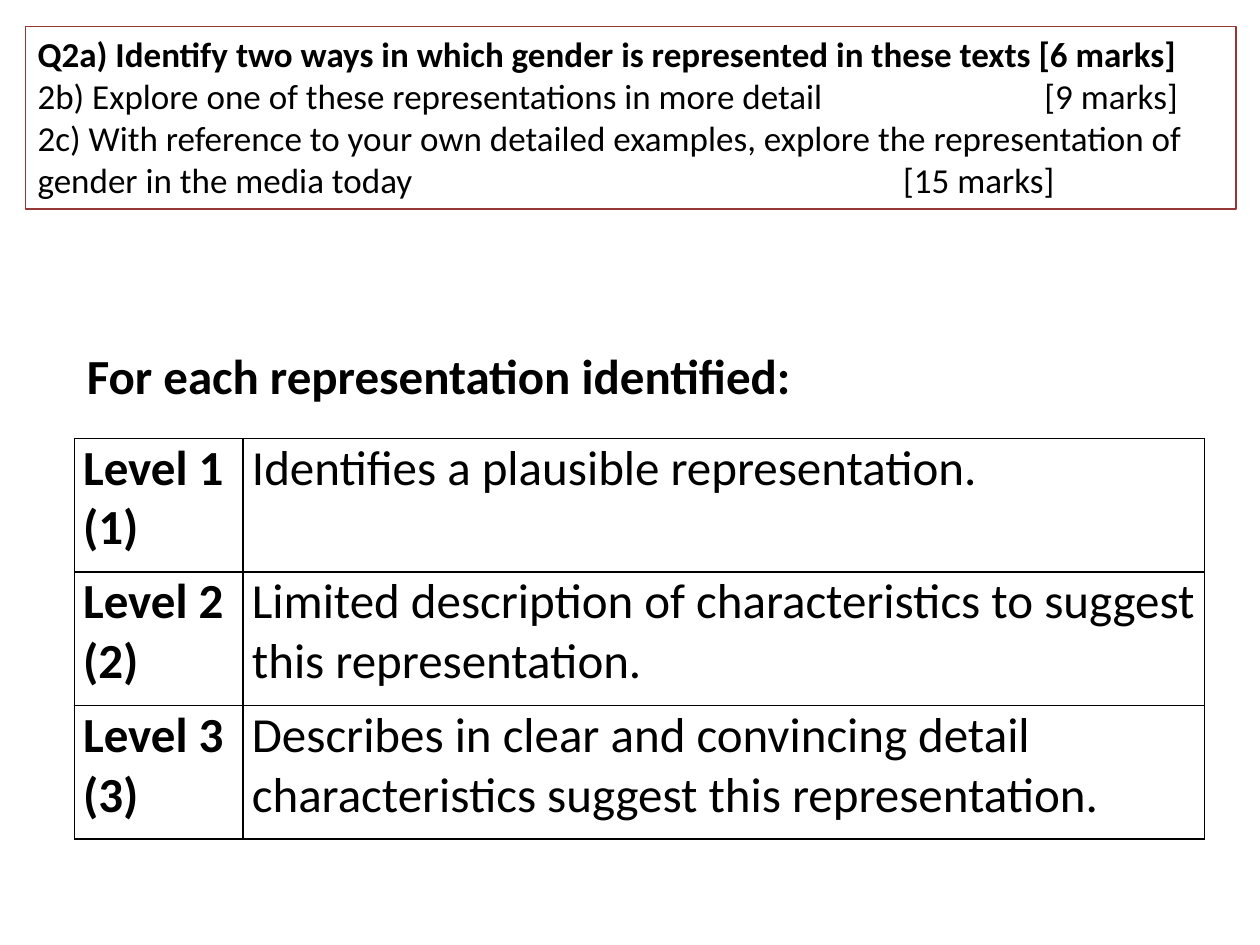
from lxml import etree
from pptx import Presentation
from pptx.dml.color import RGBColor
from pptx.enum.shapes import MSO_SHAPE
from pptx.enum.text import MSO_ANCHOR, PP_ALIGN
from pptx.oxml.ns import qn
from pptx.util import Inches, Pt

RECTANGLE = MSO_SHAPE.RECTANGLE
TOP, MIDDLE = MSO_ANCHOR.TOP, MSO_ANCHOR.MIDDLE
LEFT = PP_ALIGN.LEFT
FONT, BLACK, WHITE, RED = "Calibri", "000000", "FFFFFF", "953735"

QUESTIONS = [
    ("Q2a) Identify two ways in which gender is represented in these texts [6 marks]", True, None),
    ("2b) Explore one of these representations in more detail\t[9 marks]", False, 7.99),
    ("2c) With reference to your own detailed examples, explore the representation of "
     "gender in the media today\t[15 marks]", False, 6.87),
]
HEADING = "For each representation identified:"
LEVELS = [
    ("Level 1 (1)", "Identifies a plausible representation."),
    ("Level 2 (2)", "Limited description of characteristics to suggest this representation."),
    ("Level 3 (3)", "Describes in clear and convincing detail characteristics suggest this representation."),
]
COLUMN_WIDTHS = (1.34, 7.63)
ROW_HEIGHT = 1.06


def color(value):
    return RGBColor.from_string(value)


def write(para, text, size=28, bold=False, tab=None):
    para.alignment = LEFT
    span = para.add_run()
    span.text = text
    span.font.name = FONT
    span.font.size = Pt(size)
    span.font.bold = bold
    span.font.color.rgb = color(BLACK)
    if tab:
        stops = etree.SubElement(para._p.get_or_add_pPr(), qn("a:tabLst"))
        etree.SubElement(stops, qn("a:tab"), pos=str(Inches(tab)), algn="l")


def add_borders(cell):
    properties = cell._tc.get_or_add_tcPr()
    for index, side in enumerate(("lnL", "lnR", "lnT", "lnB")):
        line = etree.Element(qn("a:" + side), w=str(Pt(1)))
        fill = etree.SubElement(line, qn("a:solidFill"))
        etree.SubElement(fill, qn("a:srgbClr"), val=BLACK)
        properties.insert(index, line)


def add_questions(page):
    box = page.shapes.add_shape(RECTANGLE, Inches(0.2), Inches(0.21), Inches(9.61), Inches(1.45))
    box.shadow.inherit = False
    box.fill.background()
    box.line.color.rgb = color(RED)
    box.line.width = Pt(0.75)
    frame = box.text_frame
    frame.word_wrap = True
    frame.vertical_anchor = TOP
    for index, (text, bold, tab) in enumerate(QUESTIONS):
        para = frame.add_paragraph() if index else frame.paragraphs[0]
        write(para, text, size=20, bold=bold, tab=tab)


def add_levels(page):
    table = page.shapes.add_table(
        len(LEVELS), len(COLUMN_WIDTHS), Inches(0.59), Inches(3.48),
        Inches(sum(COLUMN_WIDTHS)), Inches(ROW_HEIGHT * len(LEVELS))).table
    table.first_row = table.horz_banding = False
    for column, width in zip(table.columns, COLUMN_WIDTHS):
        column.width = Inches(width)
    for row, texts in zip(table.rows, LEVELS):
        row.height = Inches(ROW_HEIGHT)
        for index, (cell, text) in enumerate(zip(row.cells, texts)):
            cell.margin_left = cell.margin_right = Inches(0.07)
            cell.margin_top = cell.margin_bottom = 0
            cell.fill.background()
            write(cell.text_frame.paragraphs[0], text, bold=index == 0)
            add_borders(cell)


def add_heading(page):
    box = page.shapes.add_textbox(Inches(0.59), Inches(2.69), Inches(7.48), Inches(0.57))
    frame = box.text_frame
    frame.word_wrap = True
    frame.vertical_anchor = MIDDLE
    write(frame.paragraphs[0], HEADING, bold=True)


def main():
    deck = Presentation()
    deck.slide_width, deck.slide_height = Inches(10), Inches(7.5)
    page = deck.slides.add_slide(deck.slide_layouts[6])
    page.background.fill.solid()
    page.background.fill.fore_color.rgb = color(WHITE)
    add_questions(page)
    add_levels(page)
    add_heading(page)
    deck.save("out.pptx")


if __name__ == "__main__":
    main()
